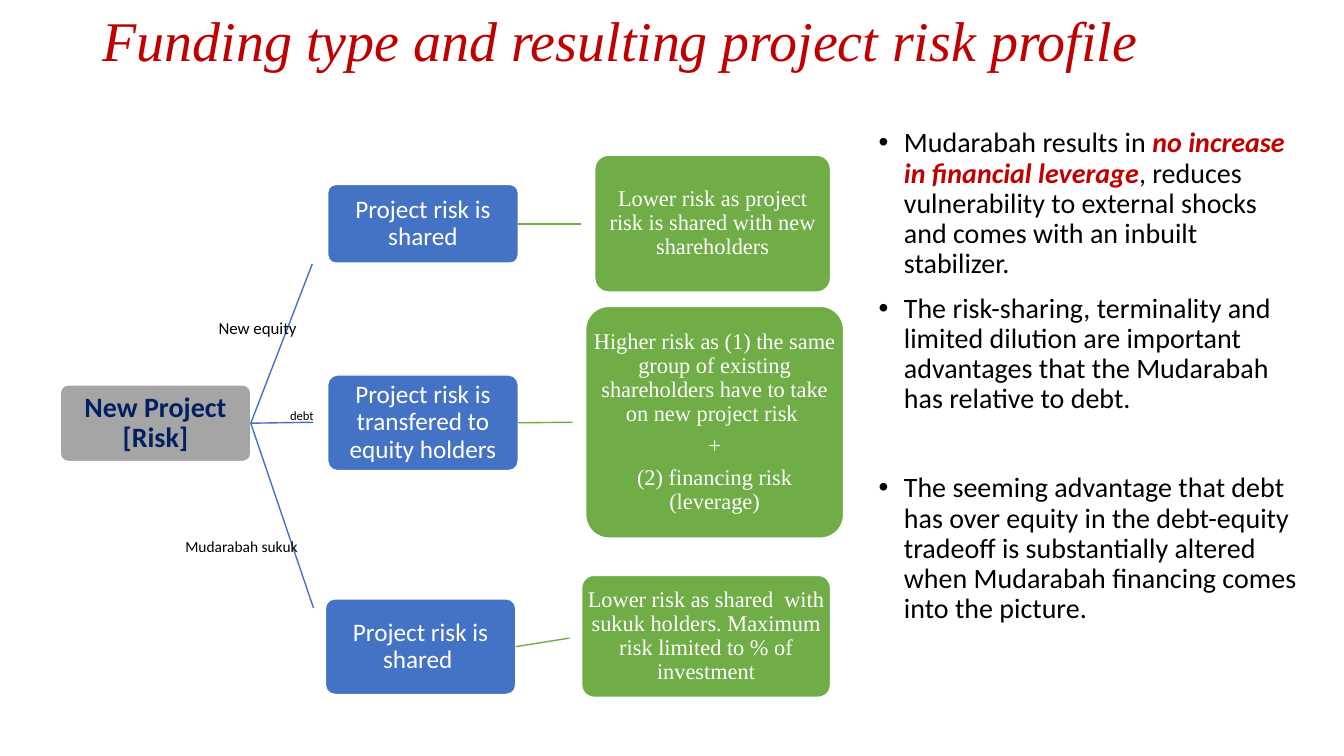
from lxml.etree import SubElement
from pptx import Presentation
from pptx.dml.color import RGBColor
from pptx.enum.shapes import MSO_CONNECTOR, MSO_SHAPE
from pptx.enum.text import MSO_ANCHOR, PP_ALIGN
from pptx.oxml.ns import qn
from pptx.util import Cm, Pt

BLACK = RGBColor(0x00, 0x00, 0x00)
WHITE = RGBColor(0xFF, 0xFF, 0xFF)
RED = RGBColor(0xC0, 0x00, 0x00)
NAVY = RGBColor(0x00, 0x20, 0x60)
GRAY = RGBColor(0xA5, 0xA5, 0xA5)
BLUE = RGBColor(0x44, 0x72, 0xC4)
GREEN = RGBColor(0x70, 0xAD, 0x47)
SANS = "Calibri"
SERIF = "Times New Roman"

BRANCHES = [
    {
        "risk": "Project risk is shared",
        "risk_at": (8.26, 4.65, 4.8, 1.98),
        "branch_end": (7.87, 6.65),
        "outcome": "Lower risk as project risk is shared with new shareholders",
        "outcome_at": (14.99, 3.91, 5.94, 3.45),
        "link_end": (14.63, 5.64),
        "label": "New equity",
        "label_at": (5.26, 7.87, 3.96, 0.76),
        "label_size": 12,
    },
    {
        "risk": "Project risk is transfered to equity holders",
        "risk_at": (8.26, 9.45, 4.8, 2.41),
        "branch_end": (7.9, 10.64),
        "outcome": "Higher risk as (1) the same group of existing shareholders "
                   "have to take on new project risk \n+\n(2) financing risk (leverage)",
        "outcome_at": (14.76, 7.72, 6.5, 5.84),
        "link_end": (14.43, 10.64),
        "label": "debt",
        "label_at": (7.06, 10.16, 1.12, 0.64),
        "label_size": 9,
    },
    {
        "risk": "Project risk is shared ",
        "risk_at": (8.2, 15.09, 4.8, 2.41),
        "branch_end": (7.9, 15.32),
        "outcome": "Lower risk as shared  with sukuk holders. "
                   "Maximum risk limited to % of investment",
        "outcome_at": (14.66, 14.5, 6.27, 3.07),
        "link_end": (14.35, 16.08),
        "label": "Mudarabah sukuk",
        "label_at": (4.42, 13.41, 4.06, 0.74),
        "label_size": 11,
    },
]

EMPHASIS = "no increase in financial leverage"
BULLETS = [
    (["Mudarabah results in ", EMPHASIS,
      ", reduces vulnerability to external shocks and comes with an inbuilt stabilizer."], 10),
    (["The risk-sharing, terminality and limited dilution are important advantages "
      "that the Mudarabah has relative to debt."], 10),
    (["The seeming advantage that debt has over equity in the debt-equity tradeoff is "
      "substantially altered when Mudarabah financing comes into the picture."], 42),
]


def style_span(span, size, color, face=SANS, bold=False, italic=False):
    """Set the font of one run."""
    span.font.name = face
    span.font.size = Pt(size)
    span.font.color.rgb = color
    span.font.bold = bold
    span.font.italic = italic


def add_text(page, place, text, size, color, **style):
    """Add a wrapping text box with one style and return its frame."""
    box = page.shapes.add_textbox(*map(Cm, place))
    frame = box.text_frame
    frame.word_wrap = True
    frame.text = text
    for para in frame.paragraphs:
        for span in para.runs:
            style_span(span, size, color, **style)
    return frame


def add_node(page, place, text, fill, size, color, **style):
    """Add a rounded box of the tree with centred text."""
    box = page.shapes.add_shape(MSO_SHAPE.ROUNDED_RECTANGLE, *map(Cm, place))
    box.adjustments[0] = 0.1
    box.shadow.inherit = False
    box.fill.solid()
    box.fill.fore_color.rgb = fill
    box.line.color.rgb = WHITE
    box.line.width = Pt(1)
    frame = box.text_frame
    frame.word_wrap = True
    frame.vertical_anchor = MSO_ANCHOR.MIDDLE
    frame.margin_left = frame.margin_right = Cm(0.03)
    frame.margin_top = frame.margin_bottom = Cm(0.03)
    frame.text = text
    for para in frame.paragraphs:
        para.alignment = PP_ALIGN.CENTER
        para.line_spacing = 0.9
        para.space_after = Pt(size * 0.35)
        for span in para.runs:
            style_span(span, size, color, **style)
    return box


def add_line(page, box, end, color):
    """Draw a line from the right side of a box to a point."""
    line = page.shapes.add_connector(MSO_CONNECTOR.STRAIGHT, 0, 0, *map(Cm, end))
    line.begin_connect(box, 3)
    line.line.color.rgb = color
    line.line.width = Pt(1)
    SubElement(line._element.spPr, qn("a:effectLst"))


def add_bullets(page, place):
    """Add the bulleted commentary."""
    frame = add_text(page, place, "", 20, BLACK)
    for index, (parts, gap) in enumerate(BULLETS):
        para = frame.add_paragraph() if index else frame.paragraphs[0]
        para.line_spacing = 0.9
        para.space_before = Pt(gap)
        properties = para._p.get_or_add_pPr()
        properties.set("marL", str(Cm(0.64)))
        properties.set("indent", str(-Cm(0.64)))
        SubElement(properties, qn("a:buFont"), typeface="Arial")
        SubElement(properties, qn("a:buChar"), char="•")
        for part in parts:
            span = para.add_run()
            span.text = part
            strong = part == EMPHASIS
            style_span(span, 20, RED if strong else BLACK, bold=strong, italic=strong)


def main():
    """Build the slide and save it."""
    deck = Presentation()
    deck.slide_width, deck.slide_height = Cm(33.87), Cm(19.05)
    page = deck.slides.add_slide(deck.slide_layouts[6])

    title = add_text(page, (2.34, 0.24, 29.21, 1.7),
                     "Funding type and resulting project risk profile",
                     40, RED, face=SERIF, italic=True)
    title.vertical_anchor = MSO_ANCHOR.MIDDLE
    title.paragraphs[0].line_spacing = 0.9

    project = add_node(page, (1.52, 9.7, 4.8, 1.93), "New Project [Risk]",
                       GRAY, 20, NAVY, bold=True)
    for branch in BRANCHES:
        add_line(page, project, branch["branch_end"], BLUE)
        risk = add_node(page, branch["risk_at"], branch["risk"], BLUE, 18, WHITE)
        add_line(page, risk, branch["link_end"], GREEN)
        add_node(page, branch["outcome_at"], branch["outcome"], GREEN, 16, WHITE, face=SERIF)
        add_text(page, branch["label_at"], branch["label"], branch["label_size"], BLACK)

    add_bullets(page, (21.89, 3.12, 11.25, 13.28))
    deck.save("out.pptx")


if __name__ == "__main__":
    main()
